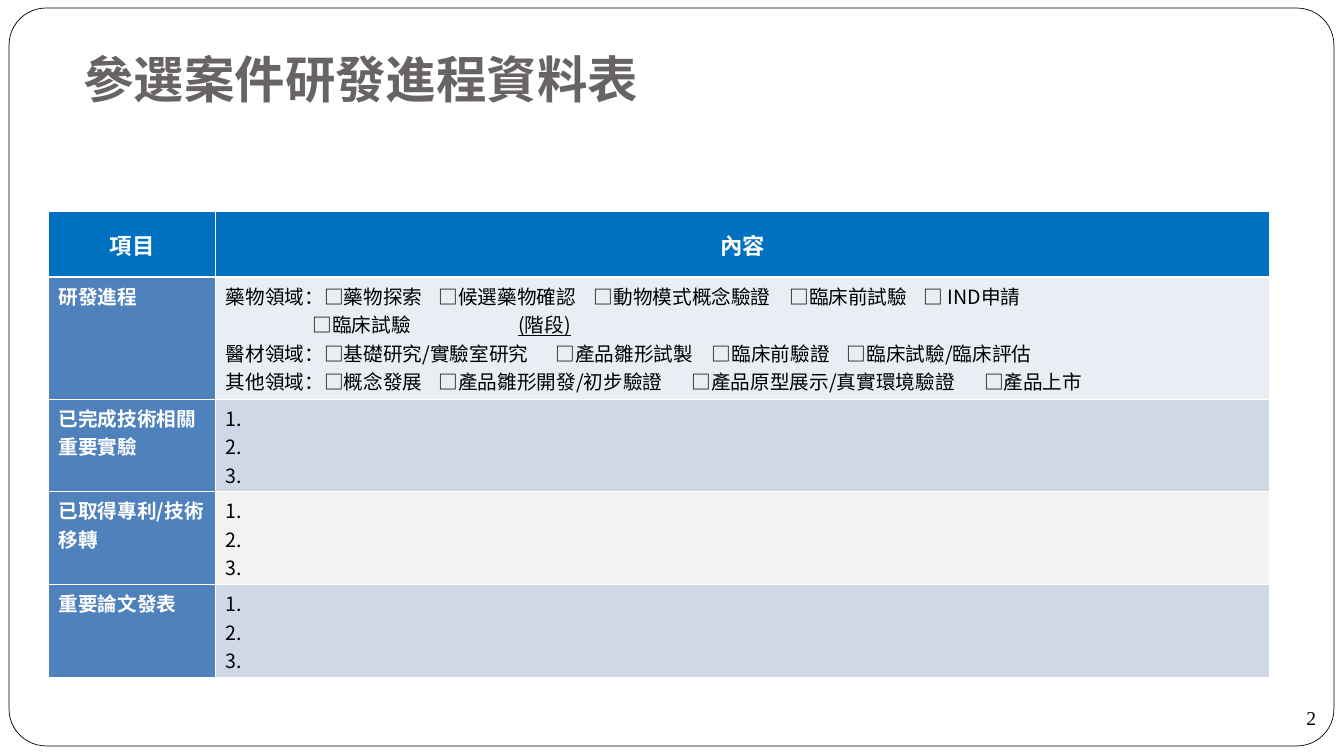
from lxml.etree import SubElement
from pptx import Presentation
from pptx.dml.color import RGBColor
from pptx.enum.shapes import MSO_SHAPE
from pptx.enum.text import MSO_ANCHOR, PP_ALIGN
from pptx.oxml.ns import qn
from pptx.util import Inches, Pt

WHITE = RGBColor(0xFF, 0xFF, 0xFF)
BLACK = RGBColor(0x00, 0x00, 0x00)
TITLE_GRAY = RGBColor(0x69, 0x64, 0x64)
HEADER_BLUE = RGBColor(0x00, 0x70, 0xC0)
LABEL_BLUE = RGBColor(0x4F, 0x81, 0xBD)
PALE_BLUE = RGBColor(0xE9, 0xED, 0xF4)
BAND_BLUE = RGBColor(0xD0, 0xD8, 0xE8)
PALE_GRAY = RGBColor(0xF2, 0xF2, 0xF2)

SANS = "Noto Sans CJK SC"
BOX_FONT = "Noto Sans CJK TC"
SERIF = "Times New Roman"
BOX = "□"

# Each line: text with tabs, tab stops in inches; "_" opens an underlined part
PROGRESS = [
    ("藥物領域：□藥物探索\t□候選藥物確認\t□動物模式概念驗證\t□臨床前試驗\t□ IND申請",
     [2.11, 3.65, 5.59, 6.92]),
    ("\t□臨床試驗_\t(階段)", [0.86, 2.9]),
    ("醫材領域：□基礎研究/實驗室研究\t□產品雛形試製\t□臨床前驗證\t□臨床試驗/臨床評估_\t",
     [3.27, 4.82, 6.16, 8.51]),
    ("其他領域：□概念發展\t□產品雛形開發/初步驗證\t□產品原型展示/真實環境驗證\t□產品上市",
     [2.11, 4.62, 7.52]),
]
NUMBERS = [(f"{n}.", []) for n in (1, 2, 3)]
ROWS = [
    ("研發進程", PROGRESS, PALE_BLUE, 1.21),
    ("已完成技術相關重要實驗", NUMBERS, BAND_BLUE, 0.92),
    ("已取得專利/技術移轉", NUMBERS, PALE_GRAY, 0.92),
    ("重要論文發表", NUMBERS, BAND_BLUE, 0.92),
]


class SlideBuilder:
    def __init__(self, slide):
        self.s = slide

    def font(self, font, name, size=None, color=None, bold=None):
        font.name, font.bold = name, bold
        if size:
            font.size = Pt(size)
        if color is not None:
            font.color.rgb = color
        SubElement(font._element, qn("a:ea"), typeface=name)

    def frame(self, tf, margins, anchor):
        tf.word_wrap = True
        tf.vertical_anchor = anchor
        (tf.margin_left, tf.margin_top,
         tf.margin_right, tf.margin_bottom) = map(Inches, margins)

    def paragraph(self, p, text, size, color, bold=False, name=SANS,
                  align=PP_ALIGN.LEFT, stops=()):
        p.alignment = align
        if stops:
            tabs = SubElement(p._p.get_or_add_pPr(), qn("a:tabLst"))
            for stop in stops:
                SubElement(tabs, qn("a:tab"), pos=str(Inches(stop)), algn="l")
        self.font(p.font, name, size, color, bold)
        plain, _, underlined = text.partition("_")
        for i, part in enumerate(plain.split(BOX)):
            if i:
                r = p.add_run()
                r.text = BOX
                self.font(r.font, BOX_FONT)
            if part:
                p.add_run().text = part
        if underlined:
            r = p.add_run()
            r.text = underlined
            r.font.underline = True

    def shape(self, kind, box, fill=None, line=None):
        sp = self.s.shapes.add_shape(kind, *map(Inches, box))
        sp.shadow.inherit = False
        if fill is None:
            sp.fill.background()
        else:
            sp.fill.solid()
            sp.fill.fore_color.rgb = fill
        if line is None:
            sp.line.fill.background()
        else:
            sp.line.color.rgb = line
            sp.line.width = Pt(0.5)
        return sp

    def title(self, box, text):
        tf = self.s.shapes.add_textbox(*map(Inches, box)).text_frame
        self.frame(tf, (0.1, 0.05, 0.1, 0.1), MSO_ANCHOR.BOTTOM)
        self.paragraph(tf.paragraphs[0], text, 36, TITLE_GRAY, True)

    def page_number(self, box, text):
        tf = self.shape(MSO_SHAPE.OVAL, box).text_frame
        self.frame(tf, (0, 0, 0, 0), MSO_ANCHOR.MIDDLE)
        self.paragraph(tf.paragraphs[0], text, 14, BLACK, name=SERIF,
                       align=PP_ALIGN.CENTER)

    def cell(self, cell, lines, fill, size=14, color=BLACK, bold=False, header=False):
        tcPr = cell._tc.get_or_add_tcPr()
        for side in ("lnL", "lnR", "lnT", "lnB"):
            width = 1.5 if header and side in ("lnT", "lnB") else 1
            ln = SubElement(tcPr, qn(f"a:{side}"), w=str(Pt(width)))
            SubElement(SubElement(ln, qn("a:solidFill")), qn("a:srgbClr"),
                       val=str(WHITE))
        cell.fill.solid()
        cell.fill.fore_color.rgb = fill
        cell.vertical_anchor = MSO_ANCHOR.MIDDLE if header else MSO_ANCHOR.TOP
        margins = (0.01, 0.01, 0.01, 0) if header else (0.1, 0.04, 0.1, 0.04)
        (cell.margin_left, cell.margin_top,
         cell.margin_right, cell.margin_bottom) = map(Inches, margins)
        tf = cell.text_frame
        for i, (text, stops) in enumerate(lines):
            p = tf.add_paragraph() if i else tf.paragraphs[0]
            self.paragraph(p, text, size, color, bold, stops=stops,
                           align=PP_ALIGN.CENTER if header else PP_ALIGN.LEFT)

    def table(self, box, widths, headings, header_height, rows):
        table = self.s.shapes.add_table(len(rows) + 1, len(widths),
                                        *map(Inches, box)).table
        table.first_row = table.horz_banding = False
        for column, width in zip(table.columns, widths):
            column.width = Inches(width)
        table.rows[0].height = Inches(header_height)
        for c, heading in enumerate(headings):
            self.cell(table.cell(0, c), [(heading, [])], HEADER_BLUE, 16, WHITE,
                      True, header=True)
        for i, (label, lines, fill, height) in enumerate(rows, 1):
            table.rows[i].height = Inches(height)
            self.cell(table.cell(i, 0), [(label, [])], LABEL_BLUE, color=WHITE,
                      bold=True)
            self.cell(table.cell(i, 1), lines, fill)


def main():
    prs = Presentation()
    prs.slide_width, prs.slide_height = Inches(13.33), Inches(7.5)
    b = SlideBuilder(prs.slides.add_slide(prs.slide_layouts[6]))

    # Rounded page border
    border = b.shape(MSO_SHAPE.ROUNDED_RECTANGLE, (0.09, 0.08, 13.14, 7.32),
                     WHITE, BLACK)
    border.adjustments[0] = 0.05

    # Title and page number
    b.title((0.73, 0.45, 11.19, 0.73), "參選案件研發進程資料表")
    b.page_number((12.67, 6.74, 0.67, 0.76), "2")

    # Development progress table
    b.table((0.48, 2.09, 12.11, 4.63), (1.66, 10.45), ("項目", "內容"), 0.66, ROWS)

    prs.save("out.pptx")


if __name__ == "__main__":
    main()
